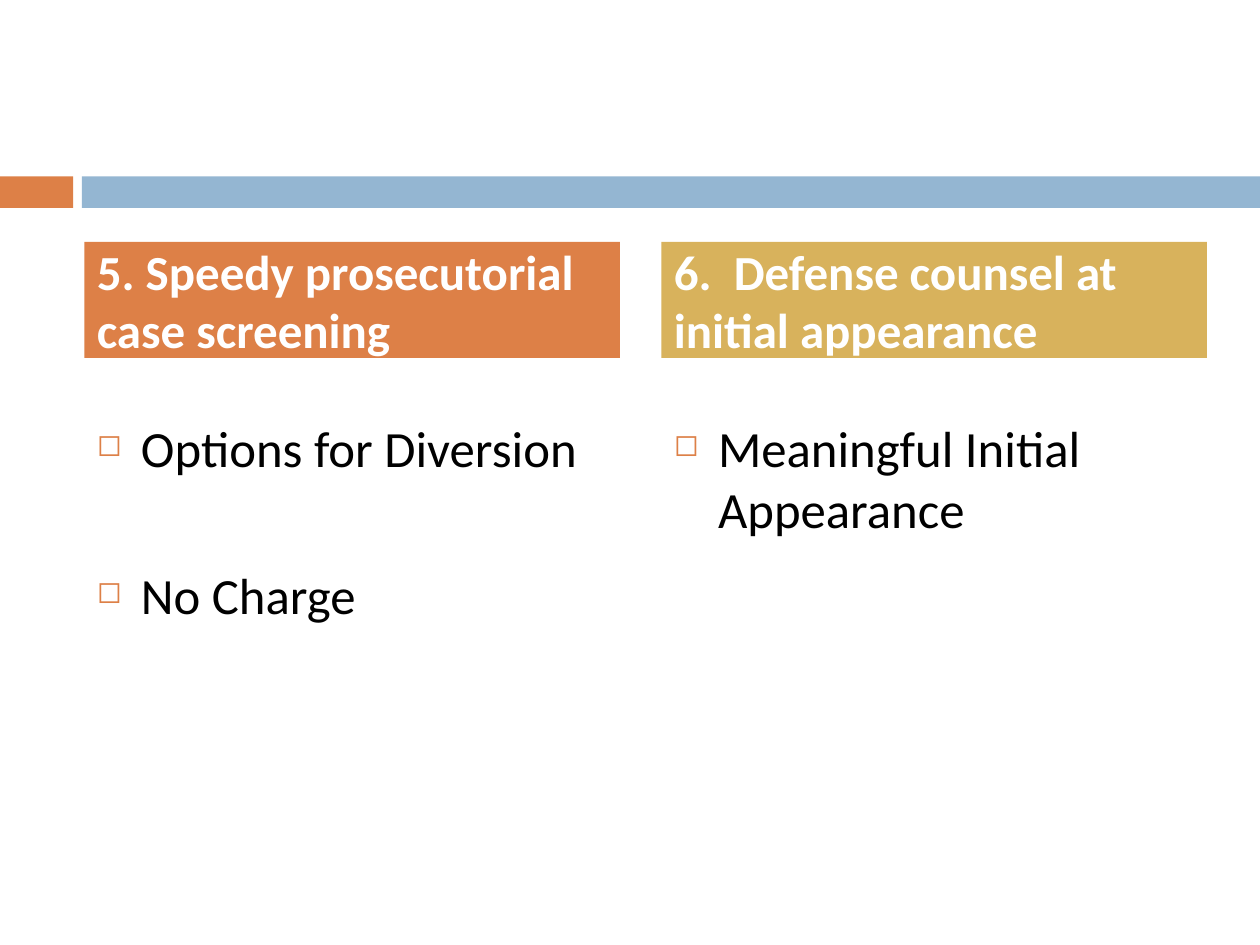
"""Build a two-column slide on case screening and defense counsel."""
from lxml.etree import SubElement
from pptx import Presentation
from pptx.dml.color import RGBColor
from pptx.enum.shapes import MSO_SHAPE
from pptx.enum.text import MSO_ANCHOR, PP_ALIGN
from pptx.oxml.ns import qn
from pptx.util import Inches, Pt

ORANGE = RGBColor(0xDD, 0x80, 0x47)
BLUE = RGBColor(0x94, 0xB6, 0xD2)
GOLD = RGBColor(0xD8, 0xB2, 0x5C)
WHITE = RGBColor(0xFF, 0xFF, 0xFF)
BLACK = RGBColor(0x00, 0x00, 0x00)

HEADING_FONT = {"name": "Calibri", "size": Pt(28), "bold": True}
ITEM_FONT = {"name": "Calibri", "size": Pt(29), "bold": False}
COLUMNS = [
    (0.67, 4.25, ORANGE, "5. Speedy prosecutorial case screening",
     ["Options for Diversion", "No Charge"]),
    (5.25, 4.33, GOLD, "6.  Defense counsel at initial appearance",
     ["Meaningful Initial Appearance"]),
]


def add_bar(left, top, width, height, color):
    shape = slide.shapes.add_shape(
        MSO_SHAPE.RECTANGLE, Inches(left), Inches(top), Inches(width), Inches(height))
    shape.shadow.inherit = False
    shape.fill.solid()
    shape.fill.fore_color.rgb = color
    shape.line.fill.background()
    return shape


def write_text(paragraph, text, font_values, color):
    run = paragraph.add_run()
    run.text = text
    for name, value in font_values.items():
        setattr(run.font, name, value)
    run.font.color.rgb = color


presentation = Presentation()
presentation.slide_width = Inches(10)
presentation.slide_height = Inches(7.5)
slide = presentation.slides.add_slide(presentation.slide_layouts[6])

add_bar(0, 1.4, 0.58, 0.25, ORANGE)
add_bar(0.65, 1.4, 9.35, 0.25, BLUE)

for left, heading_width, color, heading, items in COLUMNS:
    heading_frame = add_bar(left, 1.92, heading_width, 0.92, color).text_frame
    heading_frame.vertical_anchor = MSO_ANCHOR.MIDDLE
    heading_frame.word_wrap = True
    heading_frame.paragraphs[0].alignment = PP_ALIGN.LEFT
    write_text(heading_frame.paragraphs[0], heading, HEADING_FONT, WHITE)

    item_box = slide.shapes.add_textbox(
        Inches(left), Inches(3.26), Inches(4.25), Inches(3.33))
    item_frame = item_box.text_frame
    item_frame.word_wrap = True
    for index, item in enumerate(items):
        paragraph = item_frame.add_paragraph() if index else item_frame.paragraphs[0]
        paragraph.space_before = Pt(49 if index else 0)
        properties = paragraph._p.get_or_add_pPr()
        properties.set("marL", str(Inches(0.35)))
        properties.set("indent", str(-Inches(0.35)))
        bullet_color = SubElement(properties, qn("a:buClr"))
        SubElement(bullet_color, qn("a:srgbClr"), val=str(ORANGE))
        SubElement(properties, qn("a:buSzPct"), val="60000")
        SubElement(properties, qn("a:buChar"), char="◻")
        write_text(paragraph, item, ITEM_FONT, BLACK)

presentation.save("out.pptx")
